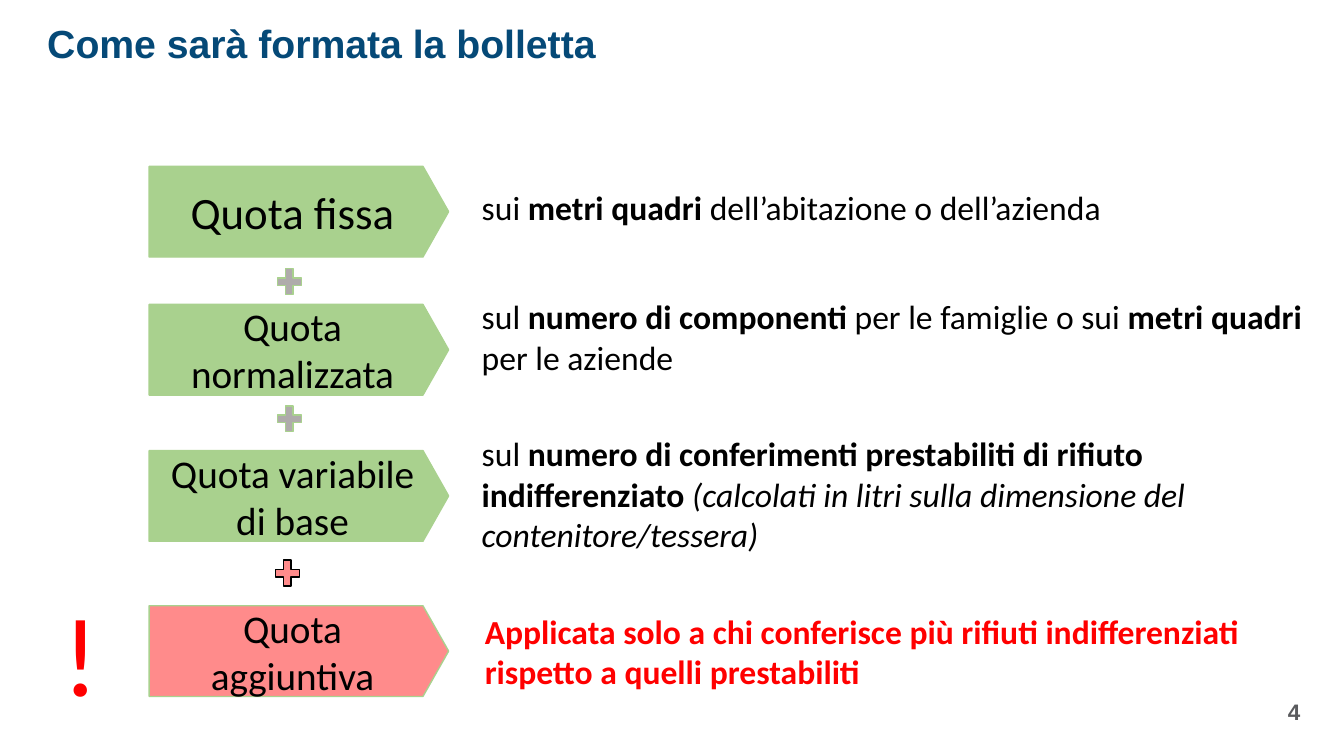
from pptx import Presentation
from pptx.dml.color import RGBColor
from pptx.enum.shapes import MSO_SHAPE
from pptx.enum.text import MSO_ANCHOR, PP_ALIGN
from pptx.util import Inches, Pt

PENTAGON, PLUS = MSO_SHAPE.PENTAGON, MSO_SHAPE.MATH_PLUS
TOP, MIDDLE = MSO_ANCHOR.TOP, MSO_ANCHOR.MIDDLE
LEFT, CENTER = PP_ALIGN.LEFT, PP_ALIGN.CENTER

BLACK = RGBColor(0x00, 0x00, 0x00)
BLUE = RGBColor(0x05, 0x49, 0x77)
GREEN = RGBColor(0xA9, 0xD1, 0x8E)
GRAY = RGBColor(0xAF, 0xAB, 0xAB)
DARK_GRAY = RGBColor(0x5A, 0x5B, 0x5E)
PINK = RGBColor(0xFF, 0x8B, 0x8B)
RED = RGBColor(0xFF, 0x00, 0x00)

QUOTA_LEFT, QUOTA_WIDTH, QUOTA_HEIGHT = 1.48, 2.97, 0.9
PLUS_WIDTH, PLUS_HEIGHT = 0.32, 0.35
DETAIL_LEFT, DETAIL_WIDTH = 4.68, 8.63

prs = Presentation()
prs.slide_width, prs.slide_height = Inches(13.33), Inches(7.5)
slide = prs.slides.add_slide(prs.slide_layouts[6])


def add_symbol(kind, left, top, width, height, fill, line):
    symbol = slide.shapes.add_shape(
        kind, Inches(left), Inches(top), Inches(width), Inches(height))
    symbol.shadow.inherit = False
    symbol.fill.solid()
    symbol.fill.fore_color.rgb = fill
    symbol.line.color.rgb = line
    symbol.line.width = Pt(1)
    return symbol


def write(shape, runs, size, color, font="Calibri", align=LEFT, anchor=TOP, wrap=True):
    frame = shape.text_frame
    frame.word_wrap = wrap
    frame.vertical_anchor = anchor
    paragraph = frame.paragraphs[0]
    paragraph.alignment = align
    paragraph.font.name = font
    paragraph.font.size = Pt(size)
    paragraph.font.color.rgb = color
    for text, style in runs:
        run = paragraph.add_run()
        run.text = text
        run.font.bold = style == "bold"
        run.font.italic = style == "italic"
    return frame


quotas = [
    ("Quota fissa", 32, 1.65, GREEN, 1.81, 0.5, BLACK, [
        ("sui ", ""), ("metri quadri ", "bold"),
        ("dell’abitazione o dell’azienda", "")]),
    ("Quota normalizzata", 28, 3.02, GREEN, 2.89, 0.91, BLACK, [
        ("sul ", ""), ("numero di componenti ", "bold"),
        ("per le famiglie o sui ", ""), ("metri quadri ", "bold"),
        ("per le aziende", "")]),
    ("Quota variabile di base", 28, 4.47, GREEN, 4.25, 1.31, BLACK, [
        ("sul ", ""),
        ("numero di conferimenti prestabiliti di rifiuto indifferenziato ", "bold"),
        ("(calcolati in litri sulla dimensione del contenitore/tessera)", "italic")]),
    ("Quota aggiuntiva", 28, 6.01, PINK, 6.01, 0.91, RED, [
        ("Applicata solo a chi conferisce più rifiuti indifferenziati "
         "rispetto a quelli prestabiliti", "bold")]),
]
for name, size, top, fill, detail_top, detail_height, color, detail in quotas:
    quota = add_symbol(PENTAGON, QUOTA_LEFT, top, QUOTA_WIDTH, QUOTA_HEIGHT, fill, GREEN)
    quota.adjustments[0] = 0.283
    write(quota, [(name, "")], size, BLACK, align=CENTER, anchor=MIDDLE)
    detail_left = DETAIL_LEFT + (0.03 if color == RED else 0)
    detail_box = slide.shapes.add_textbox(
        Inches(detail_left), Inches(detail_top), Inches(DETAIL_WIDTH), Inches(detail_height))
    write(detail_box, detail, 24, color)

for left, top, fill, line in [(2.71, 2.62, GRAY, GREEN), (2.71, 3.98, GRAY, GREEN),
                              (2.69, 5.51, PINK, BLACK)]:
    add_symbol(PLUS, left, top, PLUS_WIDTH, PLUS_HEIGHT, fill, line)

title = slide.shapes.add_textbox(Inches(0.37), Inches(0.2), Inches(5.71), Inches(0.53))
title_frame = write(title, [("Come sarà formata la bolletta", "bold")], 28, BLUE, "Arial", wrap=False)
title_frame.paragraphs[0].line_spacing = 0.9

warning = slide.shapes.add_textbox(Inches(0.52), Inches(5.75), Inches(0.57), Inches(1.45))
write(warning, [("!", "")], 80, RED, wrap=False)

page_number = slide.shapes.add_textbox(Inches(12.34), Inches(6.84), Inches(0.99), Inches(0.43))
write(page_number, [("4", "bold")], 16, DARK_GRAY, "Arial", CENTER, MIDDLE)

prs.save("out.pptx")
